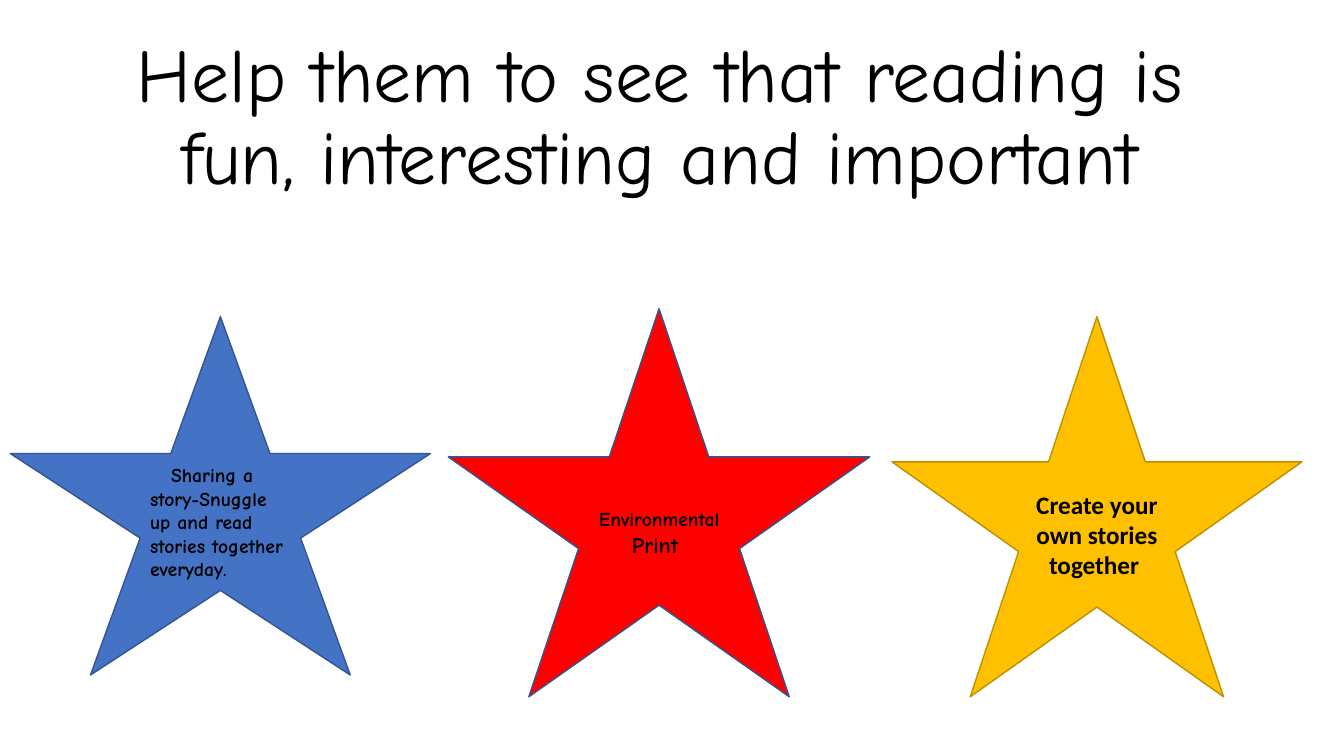
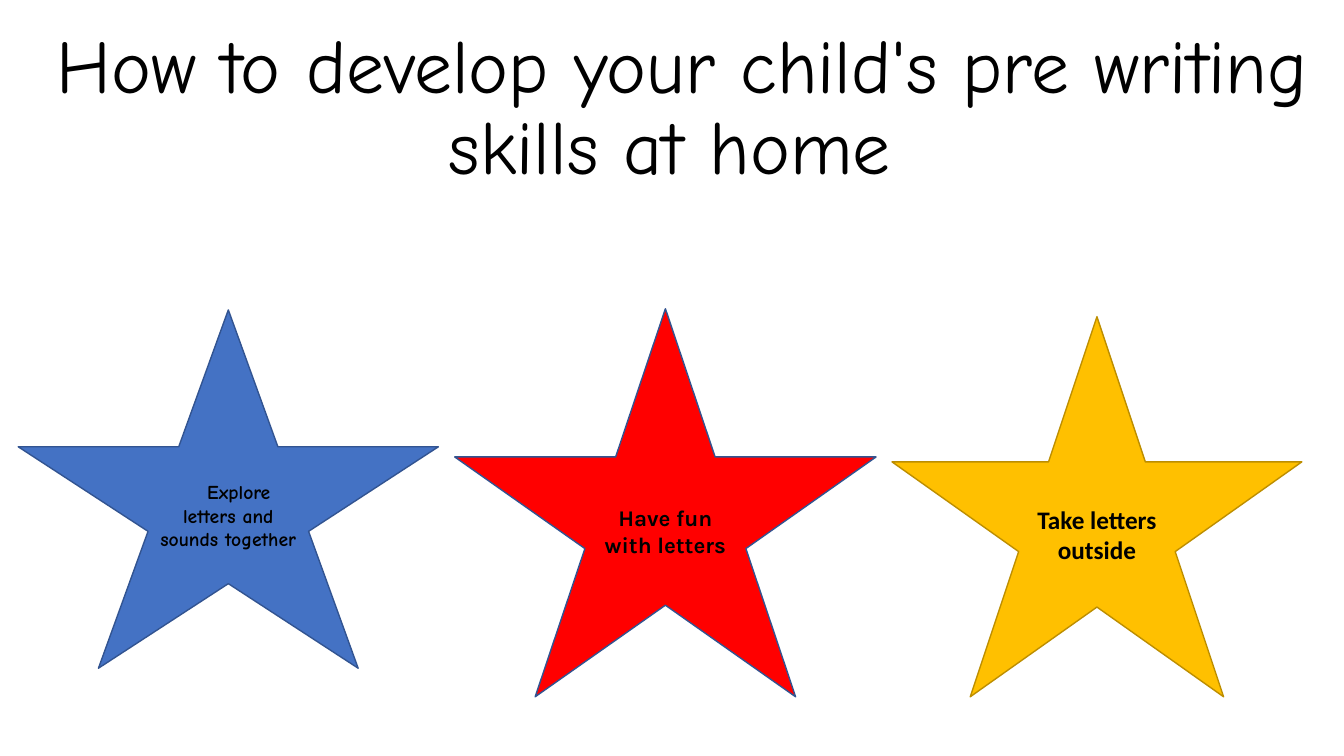
from dataclasses import dataclass

from pptx import Presentation
from pptx.dml.color import RGBColor
from pptx.enum.shapes import MSO_SHAPE as Preset
from pptx.enum.text import MSO_ANCHOR as Anchor, MSO_AUTO_SIZE as AutoSize, PP_ALIGN as Align
from pptx.slide import Slide
from pptx.util import Cm, Pt

COLORS = {
    "text": "000000",
    "blue": "4472C4",
    "red": "FF0000",
    "gold": "FFC000",
    "blue_edge": "325491",
    "gold_edge": "BD8E00",
}
TITLE_FONT = "Comic Neue"
TITLE_SIZE = 54
TITLE_ONLY_LAYOUT = 5


@dataclass(frozen=True)
class StarStyle:
    fill: str
    edge: str
    width: float
    height: float


@dataclass(frozen=True)
class Phrase:
    text: str
    size: int
    font: str = TITLE_FONT


@dataclass(frozen=True)
class Star:
    style: StarStyle
    left: float
    top: float
    phrases: tuple[Phrase, ...]
    align: Align = Align.CENTER
    indent: float = 0


@dataclass(frozen=True)
class Page:
    title: str
    title_box: tuple[float, float, float, float]
    stars: tuple[Star, ...]


BLUE = StarStyle("blue", "blue_edge", 10.59, 9.03)
RED = StarStyle("red", "blue_edge", 10.62, 9.78)
GOLD = StarStyle("gold", "gold_edge", 10.33, 9.58)

PAGES = (
    Page(
        "Help them to see that reading is\vfun, interesting and important",
        (0.43, 0.73, 32.39, 4.45),
        (
            Star(
                BLUE, 0.26, 7.98,
                (Phrase("Sharing a story-Snuggle\vup and read stories together everyday.", 14),),
                Align.LEFT, 0.53,
            ),
            Star(RED, 11.3, 7.78, (Phrase("Environmental", 14), Phrase(" Print ", 16))),
            Star(GOLD, 22.48, 7.98, (Phrase("Create your own stories together ", 18, "Calibri"),)),
        ),
    ),
    Page(
        "How to develop your child's pre writing skills at home ",
        (1.08, 0.34, 32.23, 4.6),
        (
            Star(
                BLUE, 0.46, 7.81,
                (Phrase("Explore\vletters and sounds together", 14),),
                indent=0.53,
            ),
            Star(RED, 11.46, 7.78, (Phrase("Have fun with letters", 16, "Karla"),)),
            Star(GOLD, 22.48, 7.98, (Phrase("Take letters outside", 18, "Calibri"),)),
        ),
    ),
)


def color(name: str) -> RGBColor:
    return RGBColor.from_string(COLORS[name])


def format_run(run, font_name: str, size: int, bold: bool) -> None:
    run.font.name = font_name
    run.font.size = Pt(size)
    run.font.bold = bold
    run.font.color.rgb = color("text")


def set_title(slide: Slide, page: Page) -> None:
    title = slide.shapes.title
    title.left, title.top, title.width, title.height = map(Cm, page.title_box)
    text_frame = title.text_frame
    text_frame.text = page.title
    text_frame.auto_size = AutoSize.NONE
    text_frame.word_wrap = True
    text_frame.vertical_anchor = Anchor.BOTTOM
    paragraph = text_frame.paragraphs[0]
    paragraph.alignment = Align.CENTER
    paragraph.line_spacing = 0.9
    for run in paragraph.runs:
        format_run(run, TITLE_FONT, TITLE_SIZE, False)


def draw_star(slide: Slide, star: Star) -> None:
    style = star.style
    shape = slide.shapes.add_shape(
        Preset.STAR_5_POINT, Cm(star.left), Cm(star.top), Cm(style.width), Cm(style.height)
    )
    shape.shadow.inherit = False
    shape.fill.solid()
    shape.fill.fore_color.rgb = color(style.fill)
    shape.line.color.rgb = color(style.edge)
    shape.line.width = Pt(1)
    text_frame = shape.text_frame
    text_frame.word_wrap = True
    text_frame.vertical_anchor = Anchor.MIDDLE
    paragraph = text_frame.paragraphs[0]
    paragraph.alignment = star.align
    if star.indent:
        paragraph._p.get_or_add_pPr().set("indent", str(Cm(star.indent)))
    for phrase in star.phrases:
        for number, line in enumerate(phrase.text.split("\v")):
            if number:
                paragraph.add_line_break()
            run = paragraph.add_run()
            run.text = line
            format_run(run, phrase.font, phrase.size, True)


def main() -> None:
    presentation = Presentation()
    presentation.slide_width = Cm(33.87)
    presentation.slide_height = Cm(19.05)
    layout = presentation.slide_layouts[TITLE_ONLY_LAYOUT]
    for page in PAGES:
        slide = presentation.slides.add_slide(layout)
        set_title(slide, page)
        for star in page.stars:
            draw_star(slide, star)
    presentation.save("out.pptx")


if __name__ == "__main__":
    main()
